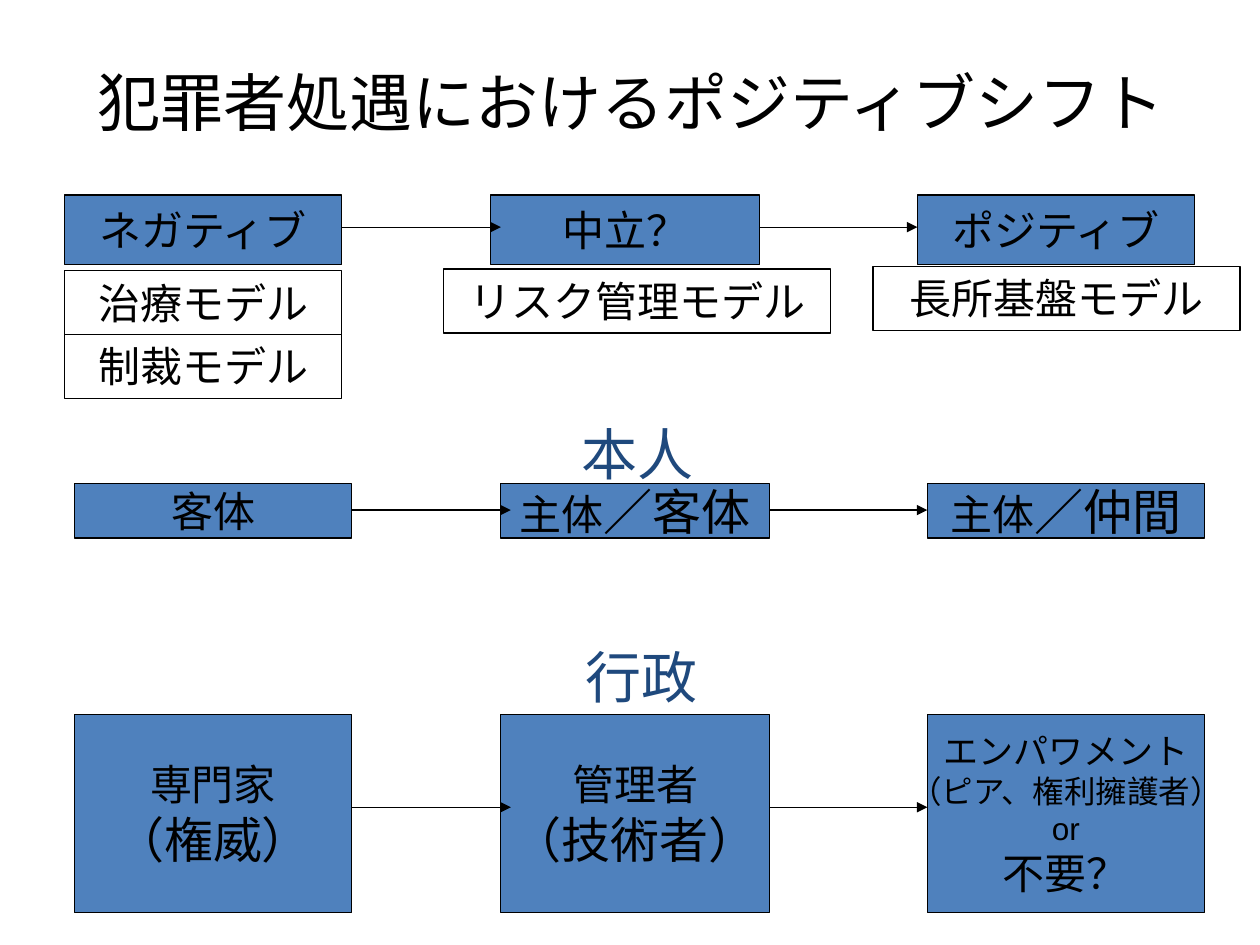
import pptx
import pptx.dml.color
import pptx.enum.shapes
import pptx.enum.text
import pptx.oxml.ns
import pptx.util
import lxml.etree

Pt = pptx.util.Pt
ANCHOR = pptx.enum.text.MSO_ANCHOR
AUTO_SIZE = pptx.enum.text.MSO_AUTO_SIZE
BLACK = pptx.dml.color.RGBColor(0x00, 0x00, 0x00)
BLUE = pptx.dml.color.RGBColor(0x4F, 0x81, 0xBD)
NAVY = pptx.dml.color.RGBColor(0x1F, 0x49, 0x7D)

COLUMNS = [(0, 158.5), (243.7, 153.4), (487.4, 158.5)]
ARROWS = [(158.5, 249.4), (397.1, 487.4)]
STAGES = [
    (36.8, 111.4, 39.8, 129.8, [
        [[("ネガティブ", 24)]],
        [[("中立？", 24)]],
        [[("ポジティブ", 24)]],
    ]),
    (42.5, 276.4, 31, 291.5, [
        [[("客体", 24)]],
        [[("主体", 24), ("／客体", 28)]],
        [[("主体", 24), ("／仲間", 28)]],
    ]),
    (42.5, 408.2, 113.4, 461.3, [
        [[("専門家", 24)], [("（権威）", 28)]],
        [[("管理者", 24)], [("（技術者）", 28)]],
        [[("エンパワメント", 20)], [("（ピア、権利擁護者）", 18)], [("or", 18)], [("不要？", 24)]],
    ]),
]
MODELS = [
    ("制裁モデル", 36.8, 191.3, 158.5),
    ("治療モデル", 36.8, 154.8, 158.5),
    ("リスク管理モデル", 253.4, 153.8, 221.3),
    ("長所基盤モデル", 498.8, 152.4, 209.8),
]
HEADINGS = [
    ("犯罪者処遇におけるポジティブシフト", 36.7, 21.6, 647.3, 72.7, 36, BLACK),
    ("本人", 40.3, 240.5, 648, 36.7, 32, NAVY),
    ("行政", 42.5, 367.9, 648, 36.7, 32, NAVY),
]


class SlideBuilder:
    """Draw the elements of one slide in a shared style, with lengths in points."""

    def __init__(self, slide, font_name="Arial", line_width=0.75):
        self.slide = slide
        self.font_name = font_name
        self.line_width = line_width

    def set_text(self, shape, paragraphs, color, frame_format):
        frame = shape.text_frame
        for name, value in frame_format.items():
            setattr(frame, name, value)
        for index, runs in enumerate(paragraphs):
            paragraph = frame.add_paragraph() if index else frame.paragraphs[0]
            paragraph.alignment = pptx.enum.text.PP_ALIGN.CENTER
            for text, size in runs:
                run = paragraph.add_run()
                run.text = text
                run.font.color.rgb = color
                for name, value in {"name": self.font_name, "size": Pt(size)}.items():
                    setattr(run.font, name, value)

    def outline(self, shape):
        shape.line.color.rgb = BLACK
        shape.line.width = Pt(self.line_width)

    def heading(self, text, left, top, width, height, size, color):
        shape = self.slide.shapes.add_textbox(Pt(left), Pt(top), Pt(width), Pt(height))
        self.set_text(shape, [[(text, size)]], color,
                      {"word_wrap": True, "vertical_anchor": ANCHOR.MIDDLE})

    def box(self, paragraphs, left, top, width, height, fill, frame_format):
        shape = self.slide.shapes.add_shape(
            pptx.enum.shapes.MSO_SHAPE.RECTANGLE, Pt(left), Pt(top), Pt(width), Pt(height))
        shape.shadow.inherit = False
        if fill is None:
            shape.fill.background()
        else:
            shape.fill.solid()
            shape.fill.fore_color.rgb = fill
        self.outline(shape)
        self.set_text(shape, paragraphs, BLACK, frame_format)

    def stage_box(self, paragraphs, left, top, width, height):
        self.box(paragraphs, left, top, width, height, BLUE,
                 {"word_wrap": False, "vertical_anchor": ANCHOR.MIDDLE})

    def model_box(self, text, left, top, width):
        self.box([[(text, 24)]], left, top, width, 36.5, None,
                 {"word_wrap": True, "vertical_anchor": ANCHOR.TOP,
                  "auto_size": AUTO_SIZE.SHAPE_TO_FIT_TEXT})

    def arrow(self, start, end, y):
        connector = self.slide.shapes.add_connector(
            pptx.enum.shapes.MSO_CONNECTOR.STRAIGHT, Pt(start), Pt(y), Pt(end), Pt(y))
        self.outline(connector)
        qn = pptx.oxml.ns.qn
        properties = connector.element.spPr
        lxml.etree.SubElement(properties.find(qn("a:ln")), qn("a:tailEnd"),
                              type="triangle", w="med", len="med")
        lxml.etree.SubElement(properties, qn("a:effectLst"))


def main():
    presentation = pptx.Presentation()
    presentation.slide_width = Pt(720)
    presentation.slide_height = Pt(540)
    builder = SlideBuilder(presentation.slides.add_slide(presentation.slide_layouts[6]))
    for heading in HEADINGS:
        builder.heading(*heading)
    for left, top, height, arrow_y, texts in STAGES:
        for (offset, width), paragraphs in zip(COLUMNS, texts):
            builder.stage_box(paragraphs, left + offset, top, width, height)
        for start, end in ARROWS:
            builder.arrow(left + start, left + end, arrow_y)
    for model in MODELS:
        builder.model_box(*model)
    presentation.save("out.pptx")


if __name__ == "__main__":
    main()
